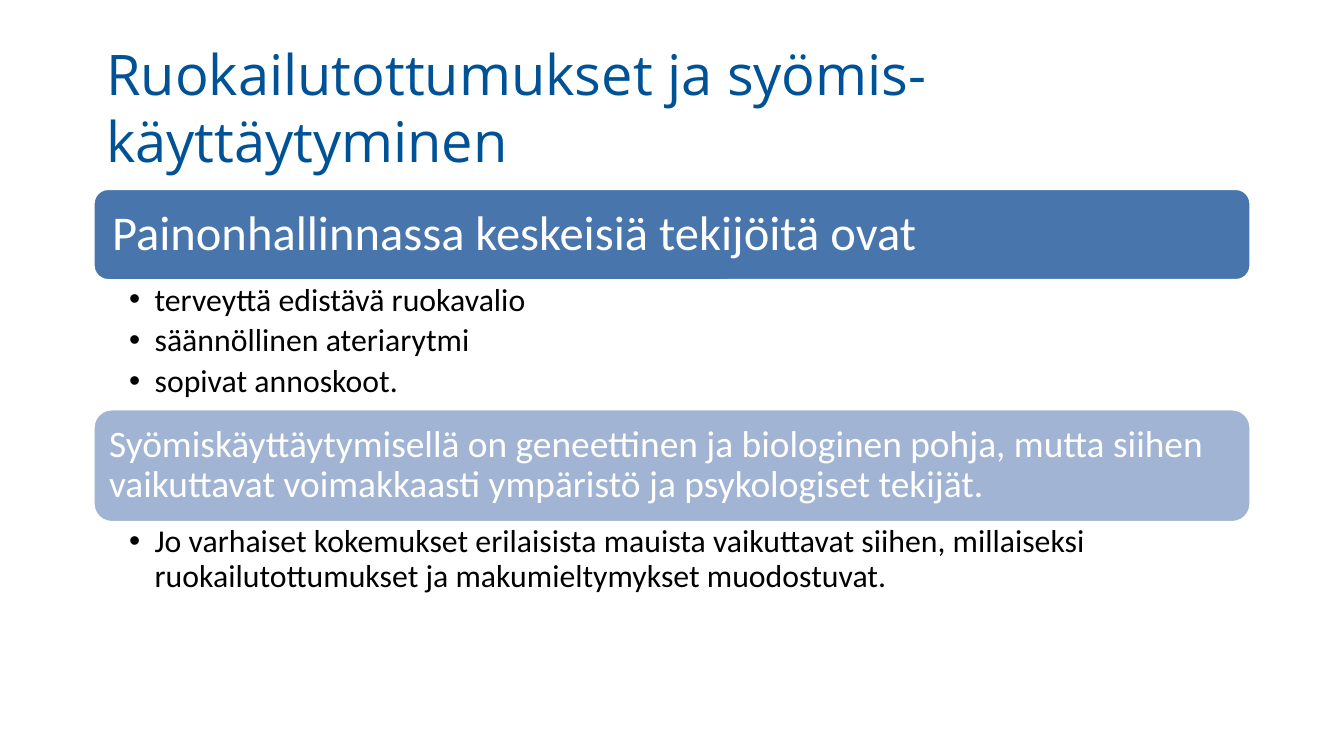
from lxml.etree import SubElement
from pptx import Presentation
from pptx.dml.color import RGBColor
from pptx.enum.shapes import MSO_SHAPE as SHAPE
from pptx.enum.text import MSO_ANCHOR as ANCHOR, MSO_AUTO_SIZE as AUTO, PP_ALIGN as ALIGN
from pptx.oxml.ns import qn
from pptx.util import Inches, Pt

WIDTH = 10
HEIGHT = WIDTH * 9 / 16
LEFT, BAND_W = 0.69, 8.62
TITLE_BLUE = RGBColor(0x00, 0x52, 0x96)
DARK_BAND = RGBColor(0x48, 0x75, 0xAC)
LIGHT_BAND = RGBColor(0xA2, 0xB4, 0xD4)
WHITE = RGBColor(0xFF, 0xFF, 0xFF)
BLACK = RGBColor(0x00, 0x00, 0x00)

# Heading, band colour, text size, inset, band height, list items, list height
SECTIONS = [
    ("Painonhallinnassa keskeisiä tekijöitä ovat", DARK_BAND, 26, 0.11, 0.69,
     ["terveyttä edistävä ruokavalio", "säännöllinen ateriarytmi", "sopivat annoskoot."], 0.95),
    ("Syömiskäyttäytymisellä on geneettinen ja biologinen pohja, mutta siihen "
     "vaikuttavat voimakkaasti ympäristö ja psykologiset tekijät.",
     LIGHT_BAND, 20, 0.08, 0.85,
     ["Jo varhaiset kokemukset erilaisista mauista vaikuttavat siihen, millaiseksi "
      "ruokailutottumukset ja makumieltymykset muodostuvat."], 0.63),
]


def place(shape, left, top, width, height):
    shape.left, shape.top = Inches(left), Inches(top)
    shape.width, shape.height = Inches(width), Inches(height)


def set_frame(tf, anchor, left, top, right, bottom):
    tf.word_wrap = True
    tf.auto_size = AUTO.NONE
    tf.vertical_anchor = anchor
    tf.margin_left, tf.margin_top = Inches(left), Inches(top)
    tf.margin_right, tf.margin_bottom = Inches(right), Inches(bottom)


def style(p, font, size, color, spacing=0.9, after=0):
    p.alignment = ALIGN.LEFT
    p.line_spacing = spacing
    p.space_before = Pt(0)
    p.space_after = Pt(after)
    for r in p.runs:
        r.font.name, r.font.size = font, Pt(size)
        r.font.color.rgb = color


def add_bullet(p, indent):
    pPr = p._p.get_or_add_pPr()
    pPr.set("marL", str(Inches(indent)))
    pPr.set("indent", str(-Inches(indent)))
    SubElement(pPr, qn("a:buFont"), typeface="Arial")
    SubElement(pPr, qn("a:buChar"), char="•")


def fill_title(title, text, box):
    place(title, *box)
    tf = title.text_frame
    set_frame(tf, ANCHOR.MIDDLE, 0.1, 0.05, 0.1, 0.05)
    tf.text = text
    style(tf.paragraphs[0], "Open Sans", 30, TITLE_BLUE, spacing=1.0)


def add_band(s, text, color, size, inset, box):
    band = s.shapes.add_shape(SHAPE.ROUNDED_RECTANGLE, *map(Inches, box))
    band.shadow.inherit = False
    band.fill.solid()
    band.fill.fore_color.rgb = color
    band.line.color.rgb = WHITE
    band.line.width = Pt(2)
    tf = band.text_frame
    set_frame(tf, ANCHOR.MIDDLE, inset, inset, inset, inset)
    tf.text = text
    style(tf.paragraphs[0], "Calibri", size, WHITE)


def fill_list(body, items, box):
    place(body, *box)
    tf = body.text_frame
    set_frame(tf, ANCHOR.TOP, 0.27, 0.02, 0.13, 0.02)
    tf.text = "\n".join(items)
    for p in tf.paragraphs:
        add_bullet(p, 0.19)
        style(p, "Calibri", 17, BLACK, after=17 * 0.2)


def main():
    prs = Presentation()
    prs.slide_width, prs.slide_height = Inches(WIDTH), Inches(HEIGHT)
    # The two-content layout supplies one body placeholder per section
    s = prs.slides.add_slide(prs.slide_layouts[3])
    title, *bodies = s.placeholders
    fill_title(title, "Ruokailutottumukset ja syömis-käyttäytyminen", (LEFT, 0.24, 8.7, 1.11))

    # Bands and lists stacked from top to bottom
    top = 1.4
    for body, section in zip(bodies, SECTIONS):
        heading, color, size, inset, band_h, items, list_h = section
        add_band(s, heading, color, size, inset, (LEFT, top, BAND_W, band_h))
        top += band_h
        fill_list(body, items, (LEFT, top, BAND_W, list_h))
        top += list_h

    prs.save("out.pptx")


if __name__ == "__main__":
    main()
